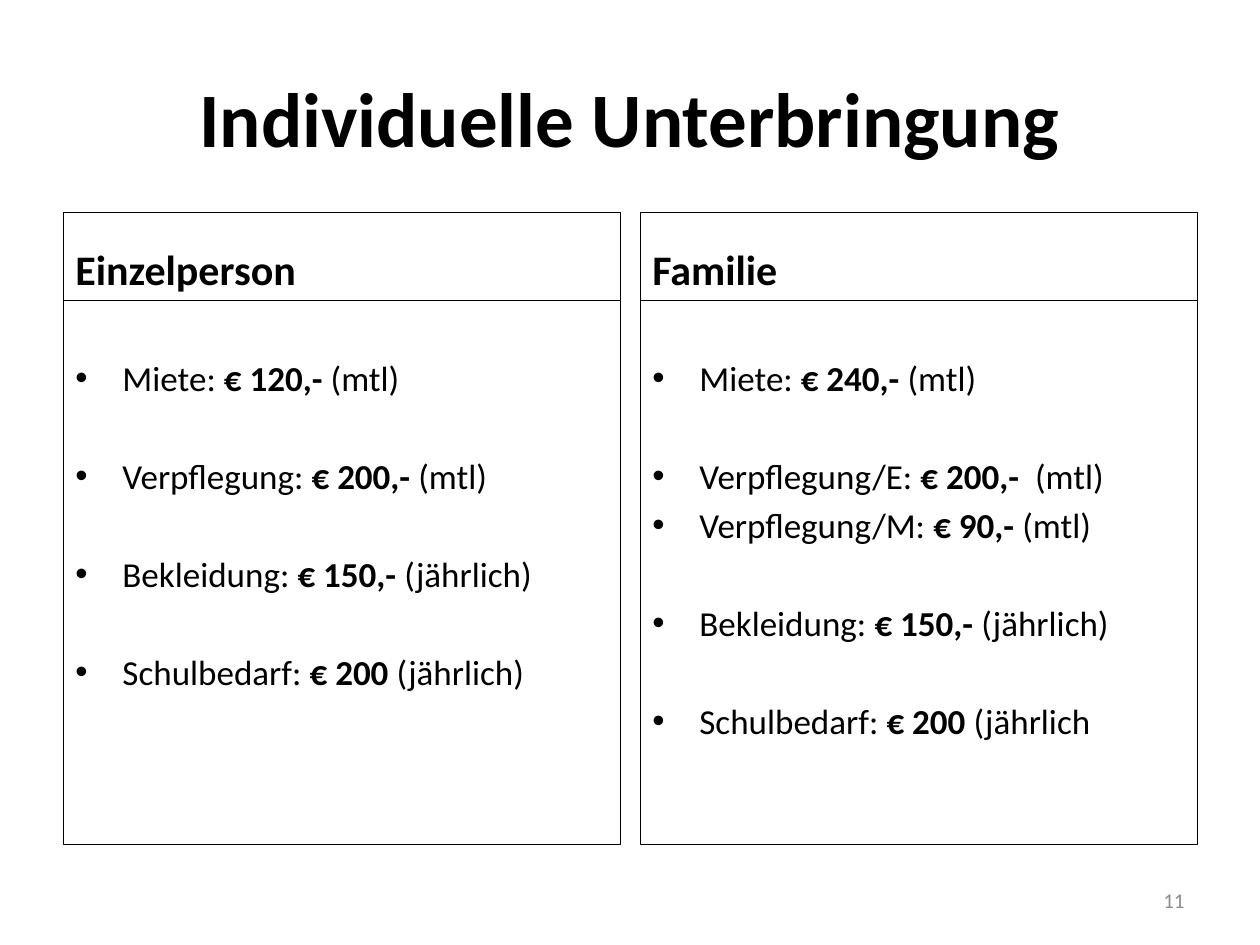
from dataclasses import dataclass

from lxml import etree
from pptx import Presentation
from pptx.dml.color import RGBColor
from pptx.enum.shapes import MSO_SHAPE
from pptx.enum.text import MSO_ANCHOR, PP_ALIGN
from pptx.oxml.ns import qn
from pptx.util import Cm, Pt

RECT = MSO_SHAPE.RECTANGLE
TOP, MIDDLE, BOTTOM = MSO_ANCHOR.TOP, MSO_ANCHOR.MIDDLE, MSO_ANCHOR.BOTTOM
LEFT, CENTER, RIGHT = PP_ALIGN.LEFT, PP_ALIGN.CENTER, PP_ALIGN.RIGHT


@dataclass(frozen=True)
class Theme:
    font: str = "Calibri"
    ink: RGBColor = RGBColor(0, 0, 0)
    gray: RGBColor = RGBColor(0x8C, 0x8C, 0x8C)
    title: int = 44
    head: int = 24
    body: int = 20
    small: int = 12


theme = Theme()

deck = Presentation()
deck.slide_width, deck.slide_height = Cm(25.4), Cm(19.05)
slide = deck.slides.add_slide(deck.slide_layouts[6])


def write(par, text, size=theme.body, color=theme.ink, bold=False,
          align=LEFT, before=0):
    par.alignment = align
    par.space_before = Pt(before)
    run = par.add_run()
    run.text = text
    font = run.font
    font.name, font.size, font.bold = theme.font, Pt(size), bold
    font.color.rgb = color


def add_box(x, y, w, h, anchor, border=True):
    """Add a text area, outlined if border is set, and return its text frame."""
    area = Cm(x), Cm(y), Cm(w), Cm(h)
    if border:
        box = slide.shapes.add_shape(RECT, *area)
        box.shadow.inherit = False
        box.fill.background()
        box.line.color.rgb = theme.ink
        box.line.width = Pt(0.25)
    else:
        box = slide.shapes.add_textbox(*area)
    frame = box.text_frame
    frame.word_wrap = True
    frame.vertical_anchor = anchor
    return frame


margin, width, step = 1.27, 11.23, 11.63
head_top, head_tall = 4.27, 1.78
list_tall = 10.97
near, far = 4, 32  # space before an item, in points

# Each item: label, amount, period, space before
cards = [
    ("Einzelperson", [
        ("Miete: ", "€ 120,- ", "(mtl)", 0),
        ("Verpflegung: ", "€ 200,- ", "(mtl)", far),
        ("Bekleidung: ", "€ 150,- ", "(jährlich)", far),
        ("Schulbedarf: ", "€ 200 ", "(jährlich)", far),
    ]),
    ("Familie", [
        ("Miete: ", "€ 240,- ", "(mtl)", 0),
        ("Verpflegung/E: ", "€ 200,-  ", "(mtl)", far),
        ("Verpflegung/M: ", "€ 90,- ", "(mtl)", near),
        ("Bekleidung: ", "€ 150,- ", "(jährlich)", far),
        ("Schulbedarf: ", "€ 200 ", "(jährlich", far),
    ]),
]

title = add_box(margin, 0.76, 22.86, 3.18, MIDDLE, border=False)
write(title.paragraphs[0], "Individuelle Unterbringung",
      size=theme.title, bold=True, align=CENTER)

for col, (name, items) in enumerate(cards):
    x = margin + col * step
    head = add_box(x, head_top, width, head_tall, BOTTOM)
    write(head.paragraphs[0], name, size=theme.head, bold=True)

    body = add_box(x, head_top + head_tall, width, list_tall, TOP)
    body.margin_top = Cm(1.14)
    for row, (label, cost, term, gap) in enumerate(items):
        par = body.add_paragraph() if row else body.paragraphs[0]
        for text, bold in ((label, False), (cost, True), (term, False)):
            write(par, text, bold=bold, before=gap)
        props = par._p.get_or_add_pPr()
        props.set("marL", str(Cm(0.95)))
        props.set("indent", str(-Cm(0.95)))
        etree.SubElement(props, qn("a:buFont")).set("typeface", "Arial")
        etree.SubElement(props, qn("a:buChar")).set("char", "•")

page = add_box(18.2, 17.65, 5.93, 1.01, MIDDLE, border=False)
write(page.paragraphs[0], "11", size=theme.small, color=theme.gray, align=RIGHT)

deck.save("out.pptx")
